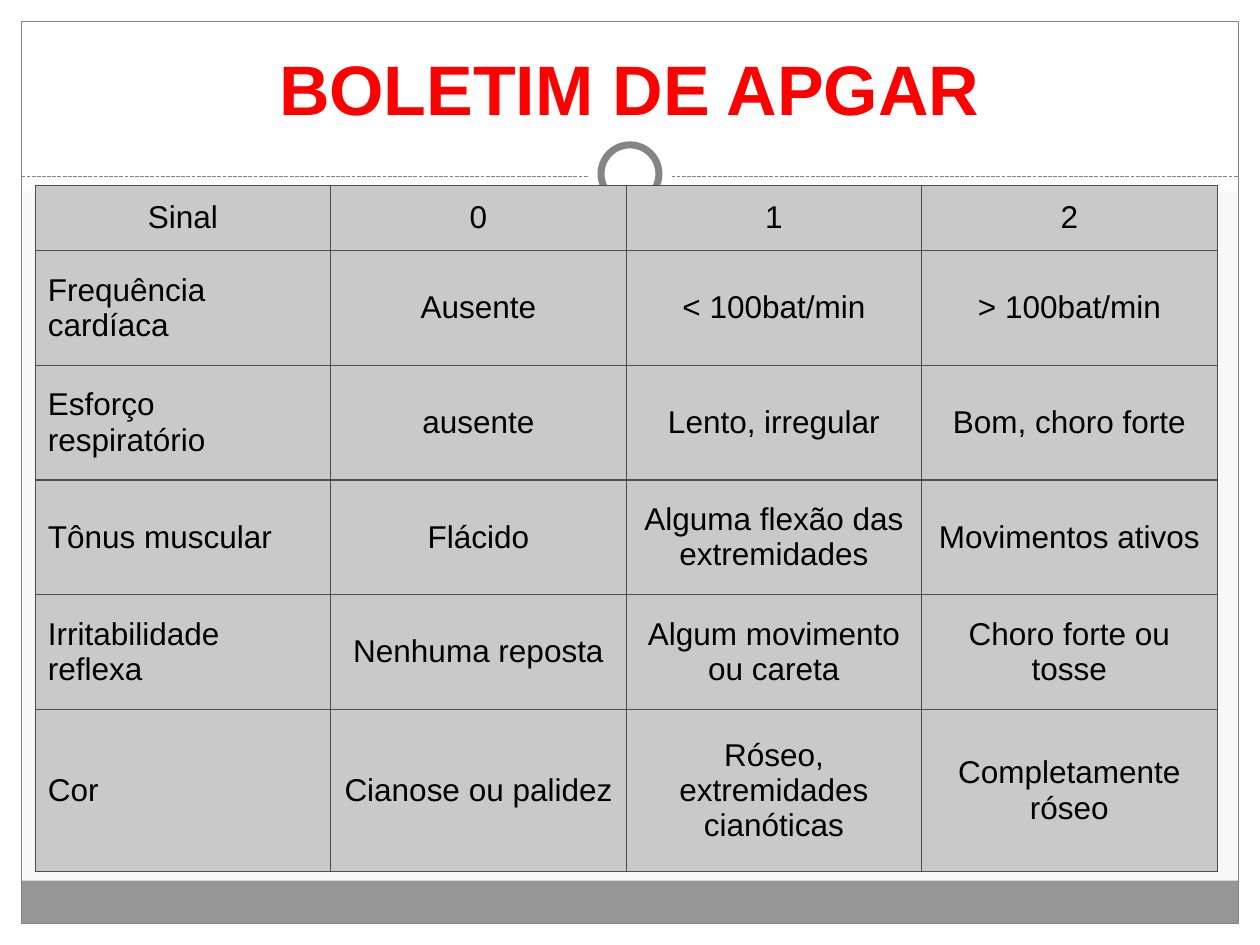
from lxml import etree
from pptx import Presentation
from pptx.dml.color import RGBColor
from pptx.enum.dml import MSO_LINE
from pptx.enum.shapes import MSO_CONNECTOR, MSO_SHAPE
from pptx.enum.text import MSO_ANCHOR, PP_ALIGN
from pptx.oxml import parse_xml
from pptx.oxml.ns import nsdecls, qn
from pptx.util import Inches, Pt

RECT, OVAL = MSO_SHAPE.RECTANGLE, MSO_SHAPE.OVAL
CENTER, LEFT = PP_ALIGN.CENTER, PP_ALIGN.LEFT
MIDDLE, BOTTOM = MSO_ANCHOR.MIDDLE, MSO_ANCHOR.BOTTOM

# Content
TITLE = "BOLETIM DE APGAR"
ROWS = [
    ("Sinal", "0", "1", "2"),
    ("Frequência cardíaca", "Ausente", "< 100bat/min", "> 100bat/min"),
    ("Esforço respiratório", "ausente", "Lento, irregular", "Bom, choro forte"),
    ("Tônus muscular", "Flácido", "Alguma flexão das extremidades", "Movimentos ativos"),
    ("Irritabilidade reflexa", "Nenhuma reposta", "Algum movimento ou careta",
     "Choro forte ou tosse"),
    ("Cor", "Cianose ou palidez", "Róseo, extremidades cianóticas", "Completamente róseo"),
]

# Layout and colours
W, H, MARGIN = 10, 7.5, 0.17
HEADER_H, RULE_Y, FOOTER_H = 1.52, 1.4, 0.34
ROW_HEIGHTS = [0.52] + [0.91] * 4 + [1.29]
TABLE_X, TABLE_Y, TABLE_W = 0.28, 1.47, 9.38
WHITE, GRAY, BAND, CELL, BORDER = "FFFFFF", "848484", "969696", "C9C9C9", "4D4D4D"


def rgb(value):
    return RGBColor.from_string(value)


def add_shape(kind, x, y, w, h, fill=None, line=None, width=0.75):
    sp = s.shapes.add_shape(kind, Inches(x), Inches(y), Inches(w), Inches(h))
    sp.shadow.inherit = False
    if fill:
        sp.fill.solid()
        sp.fill.fore_color.rgb = rgb(fill)
    else:
        sp.fill.background()
    if line:
        sp.line.color.rgb = rgb(line)
        sp.line.width = Pt(width)
    else:
        sp.line.fill.background()


def add_disc(size, **style):
    add_shape(OVAL, (W - size) / 2, RULE_Y - 0.02 - size / 2, size, size, WHITE, **style)


def style_text(p, size, color, align, bold=False):
    p.alignment = align
    p.font.name, p.font.size, p.font.bold = "Arial", Pt(size), bold
    p.font.color.rgb = rgb(color)


def add_borders(cell):
    tc_pr = cell._tc.get_or_add_tcPr()
    for i, side in enumerate(("lnL", "lnR", "lnT", "lnB")):
        tc_pr.insert(i, parse_xml(
            f'<a:{side} {nsdecls("a")} w="{Pt(0.75)}"><a:solidFill>'
            f'<a:srgbClr val="{BORDER}"/></a:solidFill></a:{side}>'))


prs = Presentation()
prs.slide_width, prs.slide_height = Inches(W), Inches(H)
s = prs.slides.add_slide(prs.slide_layouts[6])
s.background.fill.solid()
s.background.fill.fore_color.rgb = rgb("F8F8F8")

# White margins, footer band and frame
inner_w, inner_h = W - 2 * MARGIN, H - 2 * MARGIN
add_shape(RECT, 0, H - MARGIN, W, MARGIN, WHITE)
add_shape(RECT, 0, 0, W, HEADER_H, WHITE)
for x in (0, W - MARGIN):
    add_shape(RECT, x, 0, MARGIN, H, WHITE)
add_shape(RECT, MARGIN, H - MARGIN - FOOTER_H, inner_w, FOOTER_H, BAND)
add_shape(RECT, MARGIN, MARGIN, inner_w, inner_h, line=GRAY)

# Dashed rule with the ring at its middle
rule = s.shapes.add_connector(MSO_CONNECTOR.STRAIGHT, Inches(MARGIN), Inches(RULE_Y),
                              Inches(W - MARGIN), Inches(RULE_Y))
rule.line.color.rgb = rgb(GRAY)
rule.line.width = Pt(0.75)
rule.line.dash_style = MSO_LINE.SQUARE_DOT
etree.SubElement(rule._element.spPr, qn("a:effectLst"))
add_disc(0.67)
add_disc(0.46, line=GRAY, width=4)

# Title
tf = s.shapes.add_textbox(Inches(0.33), Inches(0.25), Inches(9.33), Inches(0.83)).text_frame
tf.word_wrap = True
tf.vertical_anchor = BOTTOM
tf.text = TITLE
style_text(tf.paragraphs[0], 40, "FF0000", CENTER, bold=True)

# Score table
table = s.shapes.add_table(len(ROWS), len(ROWS[0]), Inches(TABLE_X), Inches(TABLE_Y),
                           Inches(TABLE_W), Inches(sum(ROW_HEIGHTS))).table
table.horz_banding = False
for row, height in zip(table.rows, ROW_HEIGHTS):
    row.height = Inches(height)
for r, texts in enumerate(ROWS):
    for c, text in enumerate(texts):
        cell = table.cell(r, c)
        cell.text = text
        cell.vertical_anchor = MIDDLE
        cell.fill.solid()
        cell.fill.fore_color.rgb = rgb(CELL)
        add_borders(cell)
        style_text(cell.text_frame.paragraphs[0], 18, "000000",
                   LEFT if r and c == 0 else CENTER)

prs.save("out.pptx")
